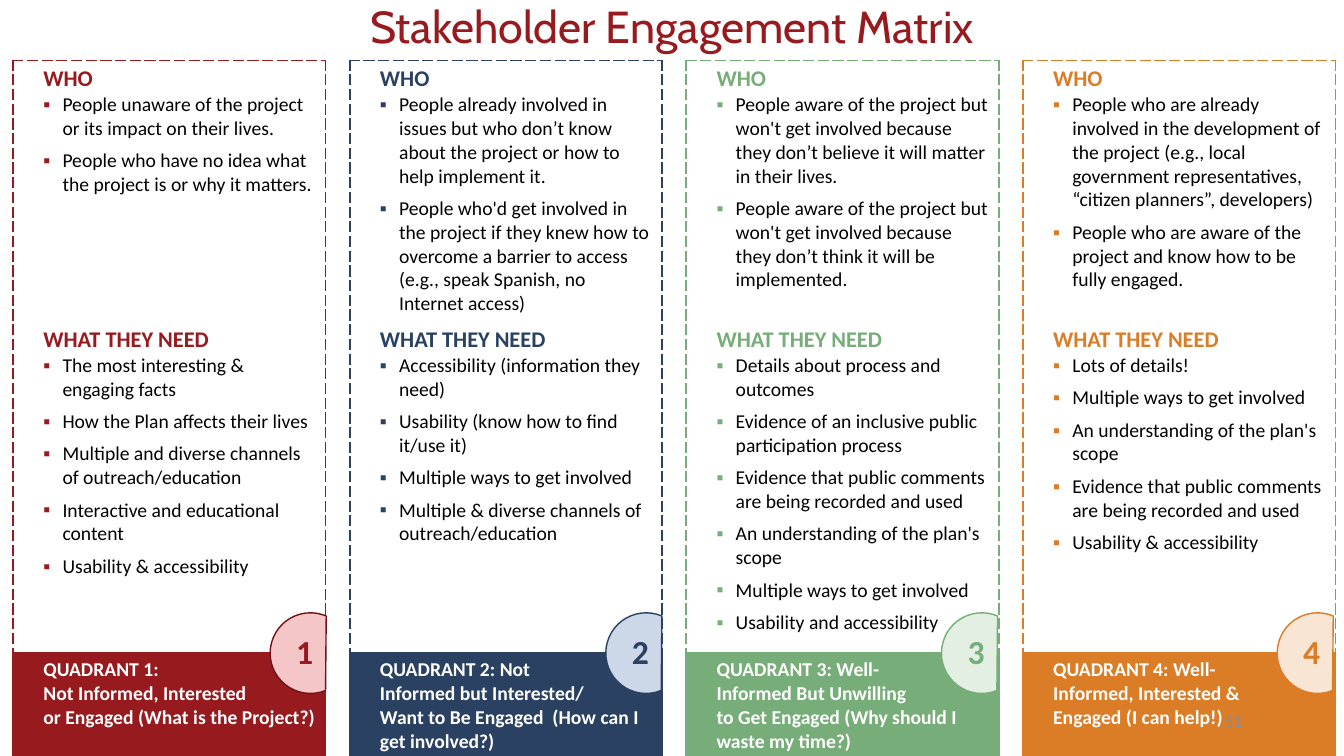
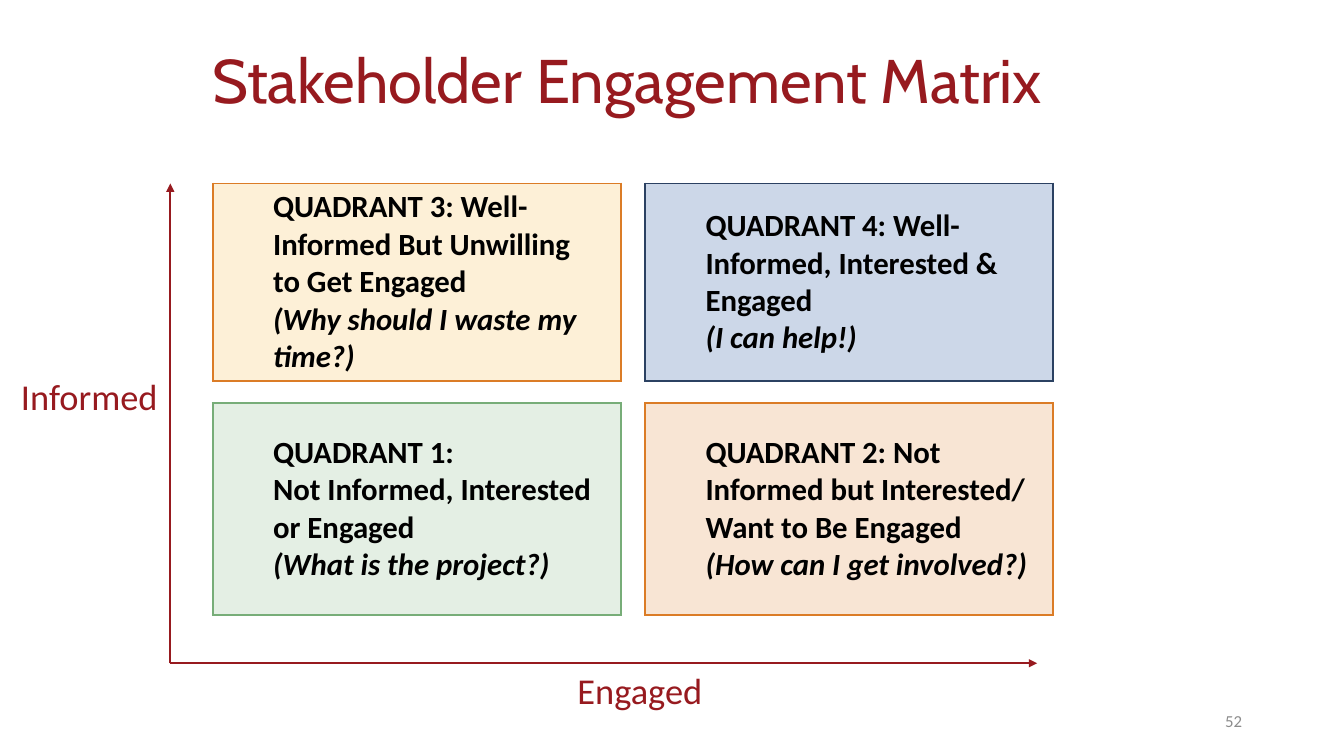
from lxml import etree
from pptx import Presentation
from pptx.dml.color import RGBColor
from pptx.enum.shapes import MSO_CONNECTOR, MSO_SHAPE
from pptx.enum.text import MSO_ANCHOR, PP_ALIGN
from pptx.oxml.ns import qn
from pptx.util import Inches, Pt

LEFT, CENTER, RIGHT = PP_ALIGN.LEFT, PP_ALIGN.CENTER, PP_ALIGN.RIGHT
TOP, MIDDLE = MSO_ANCHOR.TOP, MSO_ANCHOR.MIDDLE
CHORD, STRAIGHT = MSO_SHAPE.CHORD, MSO_CONNECTOR.STRAIGHT
PLAIN = "{2D5ABB26-0587-4C30-8999-92F81FD0307C}"

COLORS = {
    "red": "971A1F", "blue": "2B4162", "green": "77AD78", "orange": "DB7C26",
    "pink": "F5C6C8", "sky": "CCD7E8", "mint": "E4EFE4", "peach": "F8E5D4",
    "cream": "FDF0D7", "wine": "701317",
    "black": "000000", "white": "FFFFFF", "gray": "8C8C8C",
}
HEAD, BODY = "Cabin", "Calibri"

# The grid has 10 columns and 10 rows to the inch.
UNIT = Inches(0.1)
WIDE, HIGH = 133.33, 75


def grid(*units):
    return [round(unit * UNIT) for unit in units]


def rgb(name):
    return RGBColor.from_string(COLORS[name])


def sub(node, tag, **attrs):
    return etree.SubElement(node, qn(tag), attrs)


class Deck:
    def __init__(self):
        self.prs = Presentation()
        self.prs.slide_width, self.prs.slide_height = grid(WIDE, HIGH)
        self.slide = None

    def page(self):
        self.slide = self.prs.slides.add_slide(self.prs.slide_layouts[6])

    def run(self, para, text, size, color, bold=False, italic=False, font=BODY):
        run = para.add_run()
        run.text = text
        face = run.font
        face.name, face.size, face.bold, face.italic = font, Pt(size), bold, italic
        face.color.rgb = rgb(color)

    def para(self, frame, indent=0, hang=0):
        """Return the next paragraph, using the empty first one if it is free."""
        para = frame.paragraphs[0]
        if para.runs:
            para = frame.add_paragraph()
        if indent:
            props = para._p.get_or_add_pPr()
            props.set("marL", str(Inches(indent)))
            props.set("indent", str(-Inches(hang)))
        return para

    def bullet(self, frame, text, color, gap):
        para = self.para(frame, 0.39, 0.19)
        props = para._p.get_or_add_pPr()
        sub(sub(props, "a:buClr"), "a:srgbClr", val=COLORS[color])
        sub(props, "a:buFont", typeface=BODY)
        sub(props, "a:buChar", char="▪")
        para.space_before = Pt(gap)
        self.run(para, text, 14, "black")

    def label(self, box, text, size, color, align=LEFT, anchor=TOP,
              wrap=True, lead=1.0, **style):
        frame = self.slide.shapes.add_textbox(*grid(*box)).text_frame
        frame.word_wrap, frame.vertical_anchor = wrap, anchor
        para = frame.paragraphs[0]
        para.alignment, para.line_spacing = align, lead
        self.run(para, text, size, color, **style)

    def title(self, box, size):
        self.label(box, "Stakeholder Engagement Matrix", size, "red",
                   CENTER, lead=0.9, font=HEAD)

    def number(self, text):
        self.label((94.2, 69.5, 30, 4), text, 12, "gray", RIGHT, MIDDLE)

    def table(self, left, top, cols, rows):
        """Add a table without style whose empty cells may shrink."""
        table = self.slide.shapes.add_table(
            len(rows), len(cols), *grid(left, top, sum(cols), sum(rows))).table
        table.first_row = table.horz_banding = False
        table._tbl.tblPr.find(qn("a:tableStyleId")).text = PLAIN
        for col, width in zip(table.columns, grid(*cols)):
            col.width = width
        for row, height in zip(table.rows, grid(*rows)):
            row.height = height
        for cell in table.iter_cells():
            cell.margin_top = cell.margin_bottom = 0
            end = cell.text_frame.paragraphs[0]._p.get_or_add_endParaRPr()
            end.set("sz", "100")
        return table

    def cell(self, cell, color, fill=None, sides="LRTB", dash="solid", anchor=TOP):
        """Frame and fill a cell and return its text frame."""
        props = cell._tc.get_or_add_tcPr()
        for side in sides:
            line = sub(props, "a:ln" + side, w=str(Pt(1.5)))
            sub(sub(line, "a:solidFill"), "a:srgbClr", val=COLORS[color])
            sub(line, "a:prstDash", val=dash)
        if fill:
            cell.fill.solid()
            cell.fill.fore_color.rgb = rgb(fill)
        cell.margin_top = cell.margin_bottom = Inches(0.05)
        cell.vertical_anchor = anchor
        return cell.text_frame

    def badge(self, left, top, text, color, fill, edge):
        chord = self.slide.shapes.add_shape(CHORD, *grid(left, top, 8, 8))
        chord.rotation = 23
        chord.shadow.inherit = False
        chord.fill.solid()
        chord.fill.fore_color.rgb = rgb(fill)
        chord.line.color.rgb = rgb(edge)
        chord.line.width = Pt(1)
        self.label((left + 1.6, top + 1.3, 3.3, 5), text, 24, color,
                   wrap=False, bold=True)

    def arrow(self, *ends):
        line = self.slide.shapes.add_connector(STRAIGHT, *grid(*ends))
        line.line.color.rgb = rgb("red")
        line.line.width = Pt(1.5)
        sub(line.line._get_or_add_ln(), "a:tailEnd", type="triangle")
        sub(line._element.spPr, "a:effectLst")


GROUPS = [
    ("red", "pink", "wine",
     ["People unaware of the project or its impact on their lives.",
      "People who have no idea what the project is or why it matters."],
     ["The most interesting & engaging facts",
      "How the Plan affects their lives",
      "Multiple and diverse channels of outreach/education",
      "Interactive and educational content",
      "Usability & accessibility"],
     ["QUADRANT 1:", "Not Informed, Interested",
      "or Engaged (What is the Project?)"]),
    ("blue", "sky", "blue",
     ["People already involved in issues but who don’t know about the project "
      "or how to help implement it.",
      "People who'd get involved in the project if they knew how to overcome a "
      "barrier to access (e.g., speak Spanish, no Internet access)"],
     ["Accessibility (information they need)",
      "Usability (know how to find it/use it)",
      "Multiple ways to get involved",
      "Multiple & diverse channels of outreach/education"],
     ["QUADRANT 2: Not", "Informed but Interested/",
      "Want to Be Engaged  (How can I get involved?)"]),
    ("green", "mint", "green",
     ["People aware of the project but won't get involved because they don’t "
      "believe it will matter in their lives.",
      "People aware of the project but won't get involved because they don’t "
      "think it will be implemented."],
     ["Details about process and outcomes",
      "Evidence of an inclusive public participation process",
      "Evidence that public comments are being recorded and used",
      "An understanding of the plan's scope",
      "Multiple ways to get involved",
      "Usability and accessibility"],
     ["QUADRANT 3: Well-", "Informed But Unwilling",
      "to Get Engaged (Why should I waste my time?)"]),
    ("orange", "peach", "orange",
     ["People who are already involved in the development of the project (e.g., "
      "local government representatives, “citizen planners”, developers)",
      "People who are aware of the project and know how to be fully engaged."],
     ["Lots of details!",
      "Multiple ways to get involved",
      "An understanding of the plan's scope",
      "Evidence that public comments are being recorded and used",
      "Usability & accessibility"],
     ["QUADRANT 4: Well-", "Informed, Interested &",
      "Engaged (I can help!)"]),
]

# Row, column, edge, fill, bold lines, italic line
QUADS = [
    (0, 0, "orange", "cream",
     ["QUADRANT 3: Well-", "Informed But Unwilling", "to Get Engaged"],
     "(Why should I waste my time?)"),
    (0, 2, "blue", "sky",
     ["QUADRANT 4: Well-", "Informed, Interested &", "Engaged"],
     "(I can help!)"),
    (2, 0, "green", "mint",
     ["QUADRANT 1:", "Not Informed, Interested", "or Engaged"],
     "(What is the project?)"),
    (2, 2, "orange", "peach",
     ["QUADRANT 2: Not", "Informed but Interested/", "Want to Be Engaged"],
     "(How can I get involved?)"),
]


def groups(deck):
    deck.page()
    left, top, wide, gap = 1.3, 6, 31, 2.3
    rows = [25.9, 32.9, 10.5]
    table = deck.table(left, top, [wide, gap] * 3 + [wide], rows)
    deck.number("51")
    for i, (color, pale, edge, who, need, name) in enumerate(GROUPS):
        parts = [("WHO", who, "LRT"), ("WHAT THEY NEED", need, "LR")]
        for row, (head, items, sides) in enumerate(parts):
            frame = deck.cell(table.cell(row, 2 * i), color, sides=sides, dash="dash")
            deck.run(deck.para(frame, 0.2), head, 16, color, bold=True)
            for j, item in enumerate(items):
                deck.bullet(frame, item, color, 6 if j else 0)
        frame = deck.cell(table.cell(2, 2 * i), color, color)
        for line in name:
            deck.run(deck.para(frame, 0.2), line, 14, "white", bold=True)
        edge_x = left + i * (wide + gap) + wide
        deck.badge(edge_x - 5.5, top + sum(rows[:2]) - 4, str(i + 1),
                   color, pale, edge)
    deck.title((26.6, 0, 80.2, 5.7), 32)


def matrix(deck):
    deck.page()
    deck.title((17.1, 4.5, 90.3, 5.7), 44)
    table = deck.table(21.1, 18.2, [40.5, 2.3, 40.5], [19.6, 2.2, 21])
    for row, col, edge, fill, lines, quote in QUADS:
        frame = deck.cell(table.cell(row, col), edge, fill, anchor=MIDDLE)
        for line in lines + [quote]:
            deck.run(deck.para(frame, 0.5), line, 22, "black", bold=True,
                     italic=line == quote)
    x, y = 16.9, 65.8
    deck.arrow(x, y, 102.9, y)
    deck.arrow(x, y, x, 18.2)
    deck.label((1.1, 36.6, 15.8, 5.4), "Informed", 26, "red", wrap=False)
    deck.label((56.3, y, 14.5, 5.4), "Engaged", 26, "red", wrap=False)
    deck.number("52")


def main():
    deck = Deck()
    groups(deck)
    matrix(deck)
    deck.prs.save("out.pptx")


if __name__ == "__main__":
    main()
